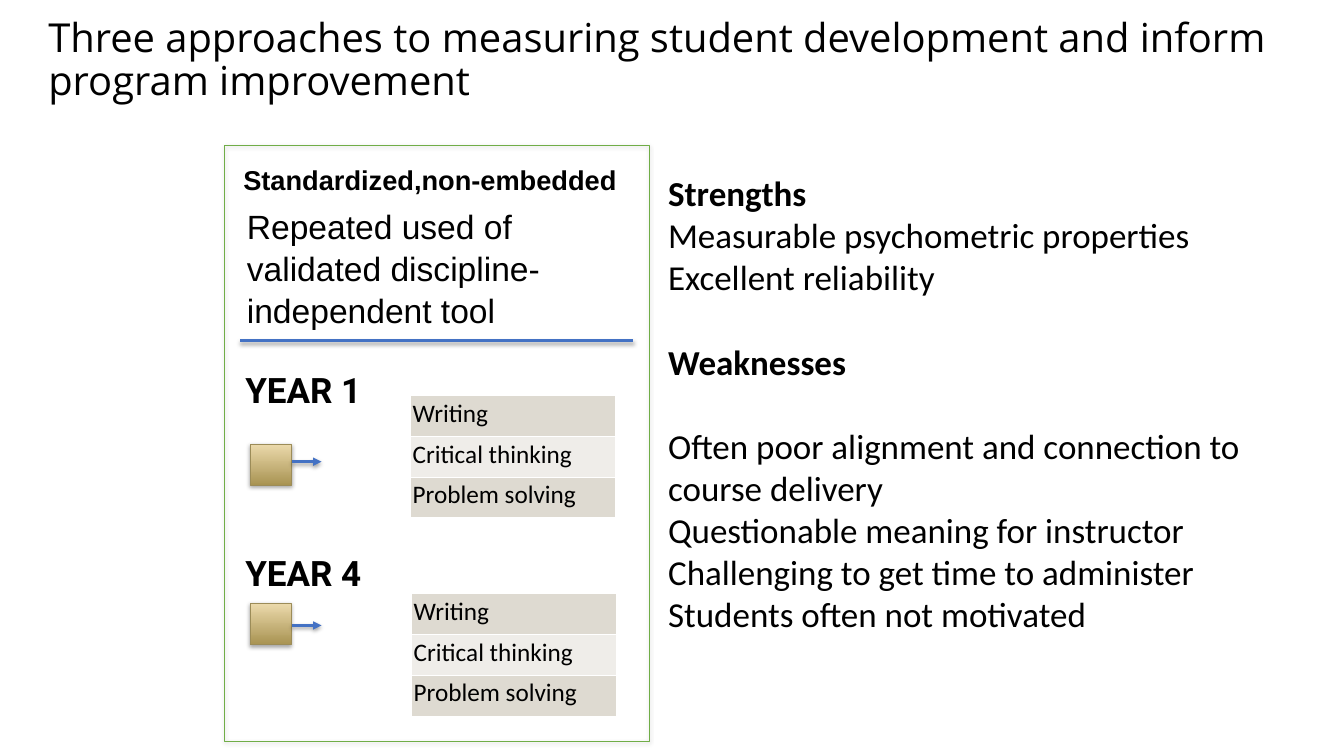
from pptx import Presentation, util as u
from pptx.dml.color import RGBColor
from pptx.enum import shapes, text
from pptx.oxml import parse_xml

PX = 9144
NS = 'xmlns:a="http://schemas.openxmlformats.org/drawingml/2006/main"'
BLACK, BLUE, WHITE = "000000", "4472C4", "FFFFFF"
SKILLS = ["Writing", "Critical thinking", "Problem solving"]


def px(*lengths):
    return [u.Emu(length * PX) for length in lengths]


def colour(value):
    return RGBColor.from_string(value)


def style(para, size, face, bold=False):
    font = para.font
    font.size, font.name, font.bold = u.Pt(size), face, bold
    font.color.rgb = colour(BLACK)


def cast_shadow(shape, alpha):
    shape._element.spPr.append(parse_xml(
        f'<a:effectLst {NS}><a:outerShdw blurRad="{u.Pt(6)}" dist="{u.Pt(3)}" dir="5400000" '
        f'rotWithShape="0"><a:srgbClr val="{BLACK}"><a:alpha val="{alpha * 1000}"/>'
        '</a:srgbClr></a:outerShdw></a:effectLst>'))


def add_text(page, box, wording, size, face, bold=False, inset=5, spacing=None,
             anchor=text.MSO_ANCHOR.TOP, wrap=True):
    frame = page.shapes.add_textbox(*px(*box)).text_frame
    frame.word_wrap, frame.vertical_anchor = wrap, anchor
    frame.margin_left, frame.margin_right = px(10, 10)
    frame.margin_top, frame.margin_bottom = px(inset, inset)
    para = frame.paragraphs[0]
    para.text = wording
    style(para, size, face, bold)
    if spacing:
        para.line_spacing = spacing
    return frame


def add_line(page, left, top, width, arrow=False):
    line = page.shapes.add_connector(
        shapes.MSO_CONNECTOR.STRAIGHT, *px(left, top, left + width, top))
    line.line.color.rgb = colour(BLUE)
    line.line.width = u.Pt(4)
    if arrow:
        line.line._get_or_add_ln().append(parse_xml(f'<a:tailEnd {NS} type="triangle"/>'))
    cast_shadow(line, 38)


def add_box(page, box, outline, gradient=None):
    shape = page.shapes.add_shape(shapes.MSO_SHAPE.RECTANGLE, *px(*box))
    if gradient:
        shape.fill.gradient()
        shape.fill.gradient_angle = 90
        for stop, value in zip(shape.fill.gradient_stops, gradient):
            stop.color.rgb = colour(value)
    else:
        shape.fill.background()
    shape.line.color.rgb = colour(outline)
    shape.line.width = u.Pt(1)
    cast_shadow(shape, 35)


def add_skill_table(page, left, top, width=408, row_height=81):
    table = page.shapes.add_table(
        len(SKILLS), 1, *px(left, top, width, row_height * len(SKILLS))).table
    table.first_row = table.horz_banding = False
    for index, skill in enumerate(SKILLS):
        cell = table.cell(index, 0)
        cell.margin_left, cell.margin_right, cell.margin_top, cell.margin_bottom = px(5, 5, 5, 5)
        cell.text = skill
        style(cell.text_frame.paragraphs[0], 36, "Calibri")
        cell.fill.solid()
        cell.fill.fore_color.rgb = colour("EFEDE9" if index % 2 else "DEDAD1")
        for order, side in enumerate("LRTB"):
            cell._tc.get_or_add_tcPr().insert(order, parse_xml(
                f'<a:ln{side} {NS} w="{u.Pt(2)}"><a:solidFill><a:srgbClr val="{WHITE}"/>'
                f'</a:solidFill></a:ln{side}>'))


def add_year(page, left, top, label, square, arrow, table):
    add_text(page, (left, top, 251, 101), label, 50, "Roboto", True, inset=10, wrap=False)
    add_box(page, (left + square[0], top + square[1], 82, 82), "9C8C58", ("A89352", "ECDAAC"))
    add_line(page, left + 102, top + arrow, 59, arrow=True)
    add_skill_table(page, left + table[0], top + table[1])


def add_approach(page, left, top, width, height):
    add_box(page, (left, top, width, height), "70AD47")
    add_text(page, (left + 27, top - 12, 814, 118), "Standardized,non-embedded",
             38.9, "Arial", True, anchor=text.MSO_ANCHOR.BOTTOM)
    add_text(page, (left + 34, top + 106, 765, 284),
             "Repeated used of validated discipline-independent tool",
             48, "Arial", inset=10, spacing=1.05)
    add_line(page, left + 31, top + 388, 780)
    add_year(page, left + 31, top + 433, "YEAR 1", (20, 160), 195, (337, 64))
    add_year(page, left + 31, top + 796, "YEAR 4", (19, 113), 157, (339, 94))


def add_assessment(page, left, top, width, height):
    blank_line = 61
    lines = [
        ("Measurable psychometric properties", False, 0),
        ("Excellent reliability", False, 0),
        ("Weaknesses", True, blank_line),
        ("Often poor alignment and connection to course delivery", False, blank_line),
        ("Questionable meaning for instructor", False, 0),
        ("Challenging to get time to administer", False, 0),
        ("Students often not motivated", False, 0),
    ]
    frame = add_text(page, (left, top, width, height), "Strengths", 50, "Calibri", True)
    for wording, bold, gap in lines:
        para = frame.add_paragraph()
        para.text = wording
        para.space_before = u.Pt(gap)
        style(para, 50, "Calibri", bold)


def main():
    deck = Presentation()
    deck.slide_width, deck.slide_height = px(2667, 1500)
    page = deck.slides.add_slide(deck.slide_layouts[6])
    add_text(page, (86, -2, 2547, 245),
             "Three approaches to measuring student development and inform program improvement",
             57, "Open Sans", spacing=0.9, anchor=text.MSO_ANCHOR.MIDDLE)
    add_approach(page, 446, 288, 842, 1182)
    add_assessment(page, 1316, 335, 1256, 1104)
    deck.save("out.pptx")


if __name__ == "__main__":
    main()
